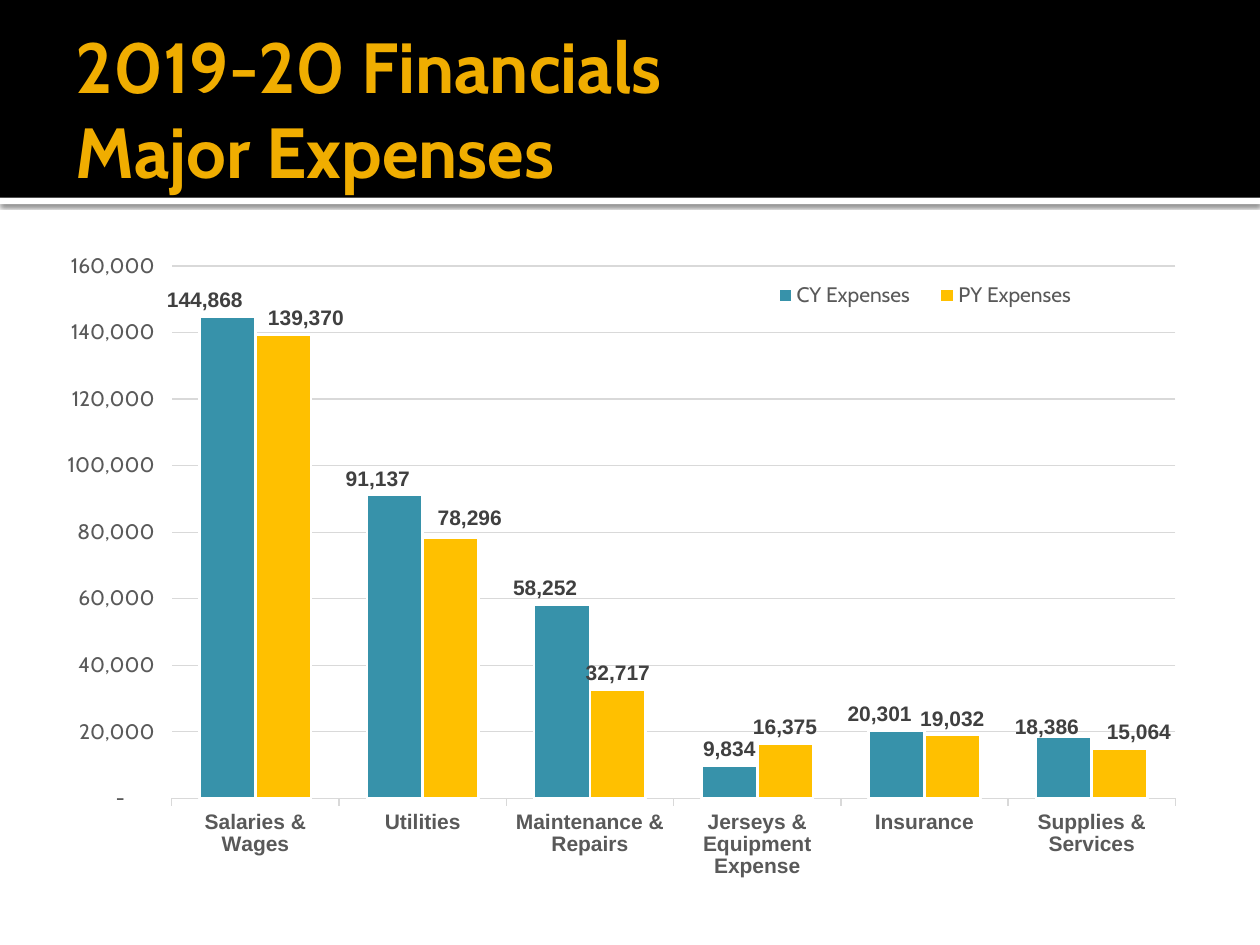
from dataclasses import dataclass

from lxml.etree import SubElement
from pptx import Presentation
from pptx.chart.data import CategoryChartData
from pptx.dml.color import RGBColor
from pptx.enum.chart import XL_LABEL_POSITION, XL_LEGEND_POSITION, XL_TICK_MARK
from pptx.enum.shapes import MSO_SHAPE
from pptx.enum.text import MSO_ANCHOR, MSO_AUTO_SIZE, PP_ALIGN
from pptx.oxml import parse_xml
from pptx.oxml.ns import nsdecls, qn
from pptx.util import Inches, Pt


@dataclass(frozen=True)
class Theme:
    black: str = "000000"
    white: str = "FFFFFF"
    title: str = "F0AD00"
    axis_text: str = "595959"
    label_text: str = "404040"
    grid: str = "D9D9D9"
    heading_font: str = "Cabin"
    label_font: str = "Arial"
    title_size: float = 40.5
    chart_size: float = 12


@dataclass(frozen=True)
class Band:
    top: float
    height: float
    color: str
    shadow: bool = False


@dataclass(frozen=True)
class ExpenseSeries:
    """Label offsets are fractions of the chart's width and height."""
    name: str
    color: str
    values: tuple
    label_offsets: tuple


THEME = Theme()
NUMBER_FORMAT = '_(* #,##0_);_(* \\(#,##0\\);_(* "-"??_);_('
BANDS = (
    Band(1.57, 0.05, THEME.white, shadow=True),
    Band(0, 1.57, THEME.black),
)
CATEGORIES = (
    "Salaries & Wages", "Utilities", "Maintenance & Repairs",
    "Jerseys & Equipment Expense", "Insurance", "Supplies & Services",
)
SERIES = (
    ExpenseSeries(
        "CY Expenses", "3792AA", (144868, 91137, 58252, 9834, 20301, 18386),
        ((-0.02, 0), (-0.015, 0), (-0.015, 0), (0, 0), (-0.015, 0), (-0.015, 0.01)),
    ),
    ExpenseSeries(
        "PY Expenses", "FFC000", (139370, 78296, 32717, 16375, 19032, 15064),
        ((0.02, 0), (0.017, -0.005), (0, 0), (0, 0), (0, 0), (0.017, 0)),
    ),
)


def rgb(color: str) -> RGBColor:
    return RGBColor.from_string(color)


def style_font(font, name: str, size: float, color: str, bold: bool = False) -> None:
    font.name, font.size, font.bold = name, Pt(size), bold
    font.color.rgb = rgb(color)


def draw_band(slide, band: Band) -> None:
    shape = slide.shapes.add_shape(
        MSO_SHAPE.RECTANGLE, 0, Inches(band.top), Inches(10), Inches(band.height))
    shape.fill.solid()
    shape.fill.fore_color.rgb = rgb(band.color)
    shape.line.fill.background()
    shape.shadow.inherit = False
    if band.shadow:
        effects = shape._element.spPr.find(qn("a:effectLst"))
        effects.append(parse_xml(
            f'<a:outerShdw {nsdecls("a")} blurRad="{Pt(2.5)}" dist="{Pt(0.8)}" '
            f'dir="5400000"><a:srgbClr val="{THEME.black}"><a:alpha val="60000"/>'
            '</a:srgbClr></a:outerShdw>'))


def format_title(slide) -> None:
    title = slide.shapes.title
    title.left, title.top = Inches(0.5), Inches(0.17)
    title.width, title.height = Inches(9), Inches(1.37)
    frame = title.text_frame
    frame.text = "2019-20 Financials\vMajor Expenses"
    frame.word_wrap = True
    frame.auto_size = MSO_AUTO_SIZE.NONE
    frame.vertical_anchor = MSO_ANCHOR.MIDDLE
    frame.margin_left = Inches(0.1)
    frame.margin_right = frame.margin_top = frame.margin_bottom = Inches(0.05)
    paragraph = frame.paragraphs[0]
    paragraph.alignment = PP_ALIGN.LEFT
    for run in paragraph.runs:
        style_font(run.font, THEME.heading_font, THEME.title_size, THEME.title, True)
    slide.shapes._spTree.append(title._element)  # in front of the bands


def fill_layout(layout, **settings) -> None:
    """Write a manual chart layout from its element names and values."""
    manual = SubElement(layout, qn("c:manualLayout"))
    for name, value in settings.items():
        SubElement(manual, qn(f"c:{name}")).set("val", str(value))


def new_layout():
    return parse_xml(f'<c:layout {nsdecls("c")}/>')


def format_axes(chart) -> None:
    category_axis, value_axis = chart.category_axis, chart.value_axis
    category_axis.format.line.color.rgb = rgb(THEME.grid)
    category_axis.format.line.width = Pt(0.75)
    category_axis.major_tick_mark = XL_TICK_MARK.OUTSIDE
    style_font(category_axis.tick_labels.font, THEME.label_font,
               THEME.chart_size, THEME.axis_text, True)

    value_axis.minimum_scale, value_axis.maximum_scale = 0, 160000
    value_axis.major_unit = 20000
    value_axis.format.line.fill.background()
    value_axis.major_tick_mark = XL_TICK_MARK.OUTSIDE
    value_axis.major_gridlines.format.line.color.rgb = rgb(THEME.grid)
    value_axis.major_gridlines.format.line.width = Pt(0.75)
    value_axis.tick_labels.number_format = NUMBER_FORMAT
    value_axis.tick_labels.number_format_is_linked = False
    style_font(value_axis.tick_labels.font, THEME.heading_font,
               THEME.chart_size, THEME.axis_text)


def format_series(series, expense: ExpenseSeries) -> None:
    series.format.fill.solid()
    series.format.fill.fore_color.rgb = rgb(expense.color)
    series.format.line.color.rgb = rgb(THEME.white)
    series.format.line.width = Pt(1.5)
    labels = series.data_labels
    labels.show_value = True
    labels.number_format, labels.number_format_is_linked = NUMBER_FORMAT, False
    labels.position = XL_LABEL_POSITION.OUTSIDE_END
    style_font(labels.font, THEME.label_font, THEME.chart_size, THEME.label_text, True)
    for index, (x, y) in enumerate(expense.label_offsets):
        if not (x or y):
            continue
        label = series.points[index].data_label
        label.position = XL_LABEL_POSITION.OUTSIDE_END
        style_font(label.font, THEME.label_font, THEME.chart_size, THEME.label_text, True)
        layout = new_layout()
        labels._element.xpath(f"c:dLbl[c:idx/@val='{index}']")[0].insert(1, layout)
        fill_layout(layout, x=x, y=y)


def format_legend(chart) -> None:
    chart.has_legend = True
    legend = chart.legend
    legend.position = XL_LEGEND_POSITION.BOTTOM
    legend.include_in_layout = True
    style_font(legend.font, THEME.heading_font, THEME.chart_size, THEME.axis_text)
    for old_layout in legend._element.findall(qn("c:layout")):
        legend._element.remove(old_layout)
    layout = new_layout()
    legend._element.find(qn("c:legendPos")).addnext(layout)
    fill_layout(layout, xMode="edge", yMode="edge", x=0.61, y=0.05, w=0.3, h=0.06)


def draw_expense_chart(slide) -> None:
    data = CategoryChartData(number_format=NUMBER_FORMAT)
    data.categories = CATEGORIES
    for expense in SERIES:
        data.add_series(expense.name, expense.values)
    chart = slide.shapes.add_chart(
        51, Inches(0.5), Inches(1.94), Inches(9), Inches(5.06), data).chart  # clustered columns
    chart.has_title = False
    style_font(chart.font, THEME.heading_font, 10, THEME.black)
    plot = chart.plots[0]
    plot.gap_width, plot.overlap = 100, 0
    plot.vary_by_categories = False
    format_axes(chart)
    for series, expense in zip(plot.series, SERIES):
        format_series(series, expense)
    format_legend(chart)
    plot_area = plot._element.getparent()
    for old_layout in plot_area.findall(qn("c:layout")):
        plot_area.remove(old_layout)
    layout = new_layout()
    plot_area.insert(0, layout)
    fill_layout(layout, layoutTarget="inner", xMode="edge", yMode="edge",
                x=0.095, y=0.034, w=0.886, h=0.835)


def main() -> None:
    presentation = Presentation()
    presentation.slide_width, presentation.slide_height = Inches(10), Inches(7.5)
    slide = presentation.slides.add_slide(presentation.slide_layouts[5])
    for band in BANDS:
        draw_band(slide, band)
    format_title(slide)
    draw_expense_chart(slide)
    presentation.save("out.pptx")


if __name__ == "__main__":
    main()
